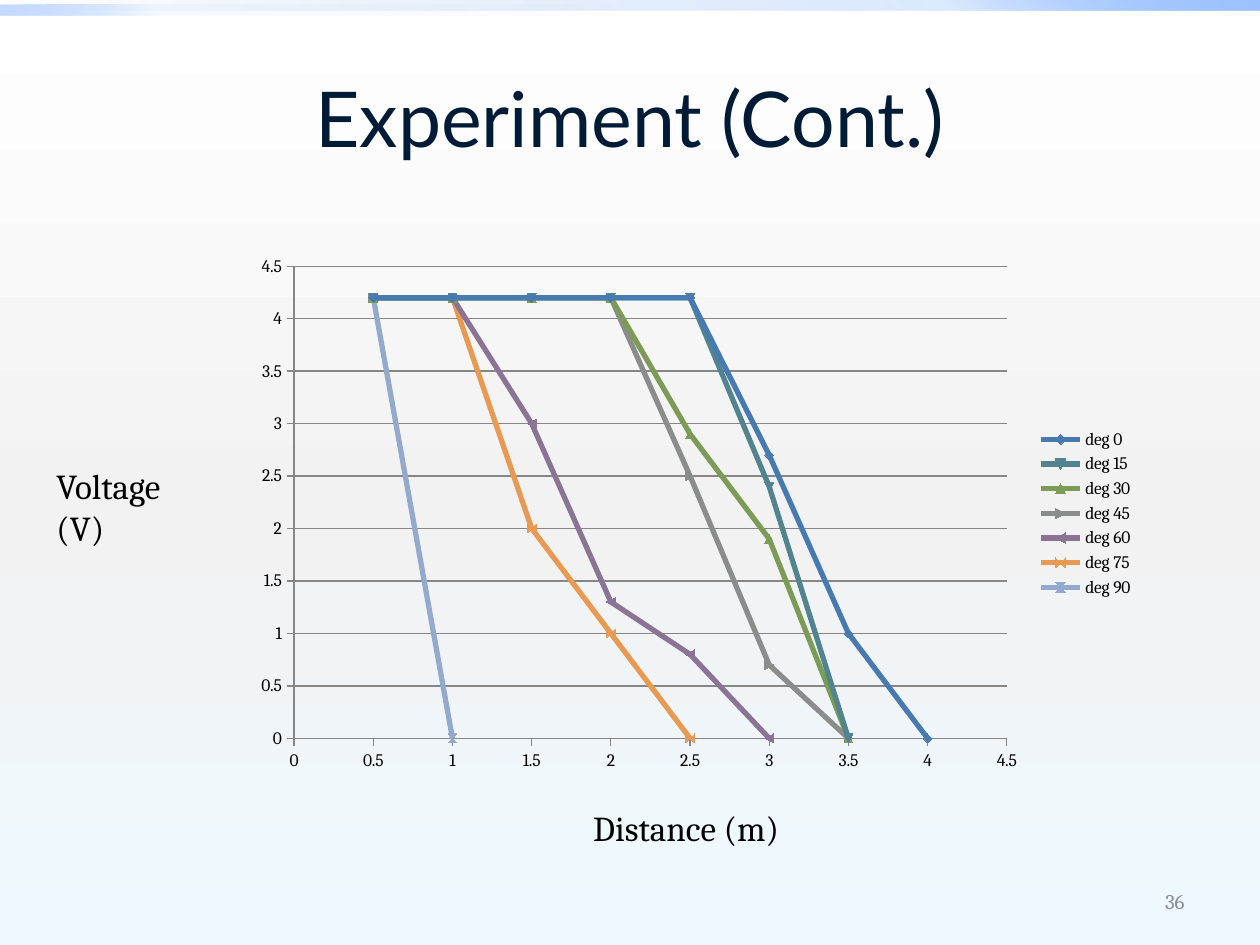
from dataclasses import dataclass

from lxml.etree import SubElement
from pptx import Presentation
from pptx.chart.data import XyChartData
from pptx.dml.color import RGBColor
from pptx.enum.chart import XL_CHART_TYPE, XL_LEGEND_POSITION, XL_TICK_MARK
from pptx.enum.shapes import MSO_SHAPE
from pptx.enum.text import MSO_ANCHOR, MSO_AUTO_SIZE, PP_ALIGN
from pptx.oxml.ns import qn
from pptx.util import Inches, Pt

WIDTH, HEIGHT = 10, 7.5
TITLE_ONLY = 5
STEP = 0.5


@dataclass(frozen=True)
class Theme:
    title_font: str = "Lato"
    body_font: str = "Cambria"
    title_size: int = 44
    label_size: int = 20
    number_size: int = 12
    chart_size: int = 10
    title_color: str = "001B36"
    text_color: str = "000000"
    number_color: str = "8C8C8C"
    grid_color: str = "868686"
    # Gradient stops: position in percent, colour, opacity in percent
    background: tuple = ((0, "FFFFFF", 100), (55, "F2F2F2", 100), (100, "EEF9FF", 100))
    top_bar: tuple = ((0, "0058B7", 0), (75, "4F95FF", 20), (100, "9EC2FF", 100))
    left_bar: tuple = ((0, "0058B7", 0), (75, "4F95FF", 5), (100, "9EC2FF", 60))


THEME = Theme()

# Voltages at 0.5 m, 1 m, 1.5 m and so on
SERIES = (
    ("deg 0", "477AB1", (4.2, 4.2, 4.2, 4.2, 4.2, 2.7, 1, 0)),
    ("deg 15", "51848E", (4.2, 4.2, 4.2, 4.2, 4.2, 2.4, 0)),
    ("deg 30", "7B9B57", (4.2, 4.2, 4.2, 4.2, 2.9, 1.9, 0)),
    ("deg 45", "8B8D8C", (4.2, 4.2, 4.2, 4.2, 2.5, 0.7, 0)),
    ("deg 60", "8B7396", (4.2, 4.2, 3, 1.3, 0.8, 0)),
    ("deg 75", "E89A53", (4.2, 4.2, 2, 1, 0)),
    ("deg 90", "93A9CE", (4.2, 0)),
)


def color(value):
    return RGBColor.from_string(value)


def inches(box):
    return [Inches(length) for length in box]


def set_gradient(fill, element, stops, angle):
    """Fill with any number of stops; the angle runs clockwise."""
    fill.gradient()
    fill.gradient_angle = (360 - angle) % 360
    stop_list = element.find(".//" + qn("a:gsLst"))
    for old_stop in list(stop_list):
        stop_list.remove(old_stop)
    for position, value, opacity in stops:
        stop = SubElement(stop_list, qn("a:gs"), pos=str(position * 1000))
        stop_color = SubElement(stop, qn("a:srgbClr"), val=value)
        if opacity < 100:
            SubElement(stop_color, qn("a:alpha"), val=str(opacity * 1000))


def add_bar(slide, box, stops, angle):
    bar = slide.shapes.add_shape(MSO_SHAPE.RECTANGLE, *inches(box))
    bar.shadow.inherit = False
    bar.line.fill.background()
    set_gradient(bar.fill, bar.element, stops, angle)


def write_text(shape, text, *, size, value, font=THEME.body_font,
               align=PP_ALIGN.LEFT, anchor=MSO_ANCHOR.TOP, grow=False):
    frame = shape.text_frame
    frame.word_wrap = True
    frame.auto_size = MSO_AUTO_SIZE.SHAPE_TO_FIT_TEXT if grow else MSO_AUTO_SIZE.NONE
    frame.vertical_anchor = anchor
    paragraph = frame.paragraphs[0]
    paragraph.alignment = align
    run = paragraph.add_run()
    run.text = text
    run.font.name = font
    run.font.size = Pt(size)
    run.font.color.rgb = color(value)


def add_text(slide, box, text, **text_format):
    write_text(slide.shapes.add_textbox(*inches(box)), text, **text_format)


def add_title(slide, text):
    title = slide.shapes.title
    title.left, title.top, title.width, title.height = inches((0.5, 0.3, 9, 1.25))
    write_text(title, text, size=THEME.title_size, value=THEME.title_color,
               font=THEME.title_font, align=PP_ALIGN.CENTER, anchor=MSO_ANCHOR.MIDDLE)


def format_axis(axis):
    axis.minimum_scale, axis.maximum_scale, axis.major_unit = 0, 4.5, STEP
    axis.major_tick_mark = XL_TICK_MARK.OUTSIDE
    axis.minor_tick_mark = XL_TICK_MARK.NONE
    axis.has_major_gridlines = False
    axis.format.line.color.rgb = color(THEME.grid_color)
    axis.tick_labels.number_format = "General"
    axis.tick_labels.number_format_is_linked = False


def add_voltage_chart(slide, box):
    data = XyChartData()
    for name, _, voltages in SERIES:
        series = data.add_series(name)
        for index, voltage in enumerate(voltages, start=1):
            series.add_data_point(index * STEP, voltage)
    chart = slide.shapes.add_chart(
        XL_CHART_TYPE.XY_SCATTER_SMOOTH, *inches(box), data).chart
    chart.has_title = False
    chart.font.name = THEME.body_font
    chart.font.size = Pt(THEME.chart_size)
    chart.font.color.rgb = color(THEME.text_color)
    chart.has_legend = True
    chart.legend.position = XL_LEGEND_POSITION.RIGHT
    chart.legend.include_in_layout = False
    for axis in (chart.category_axis, chart.value_axis):
        format_axis(axis)
    chart.value_axis.has_major_gridlines = True
    chart.value_axis.major_gridlines.format.line.color.rgb = color(THEME.grid_color)
    plot = chart.plots[0]
    plot.vary_by_categories = False
    for series, (_, value, _) in zip(plot.series, SERIES):
        series.smooth = True
        series.format.line.width = Pt(3)
        series.format.line.color.rgb = color(value)


def main():
    presentation = Presentation()
    presentation.slide_width, presentation.slide_height = inches((WIDTH, HEIGHT))
    slide = presentation.slides.add_slide(presentation.slide_layouts[TITLE_ONLY])

    set_gradient(slide.background.fill, slide.element, THEME.background, 90)
    add_bar(slide, (0, 0, WIDTH, 0.08), THEME.top_bar, 315)
    add_bar(slide, (0, 0.04, WIDTH / 2, 0.08), THEME.left_bar, 135)
    add_title(slide, "Experiment (Cont.)")
    add_text(slide, (7.17, 6.95, 2.33, 0.4), "36", size=THEME.number_size,
             value=THEME.number_color, align=PP_ALIGN.RIGHT, anchor=MSO_ANCHOR.MIDDLE)
    add_voltage_chart(slide, (1.93, 1.95, 7.17, 4.25))
    for text, box in (("Distance (m)", (4.61, 6.35, 1.73, 0.44)),
                      ("Voltage (V)", (0.35, 3.64, 1.44, 0.44))):
        add_text(slide, box, text, size=THEME.label_size,
                 value=THEME.text_color, grow=True)
    presentation.save("out.pptx")


if __name__ == "__main__":
    main()
